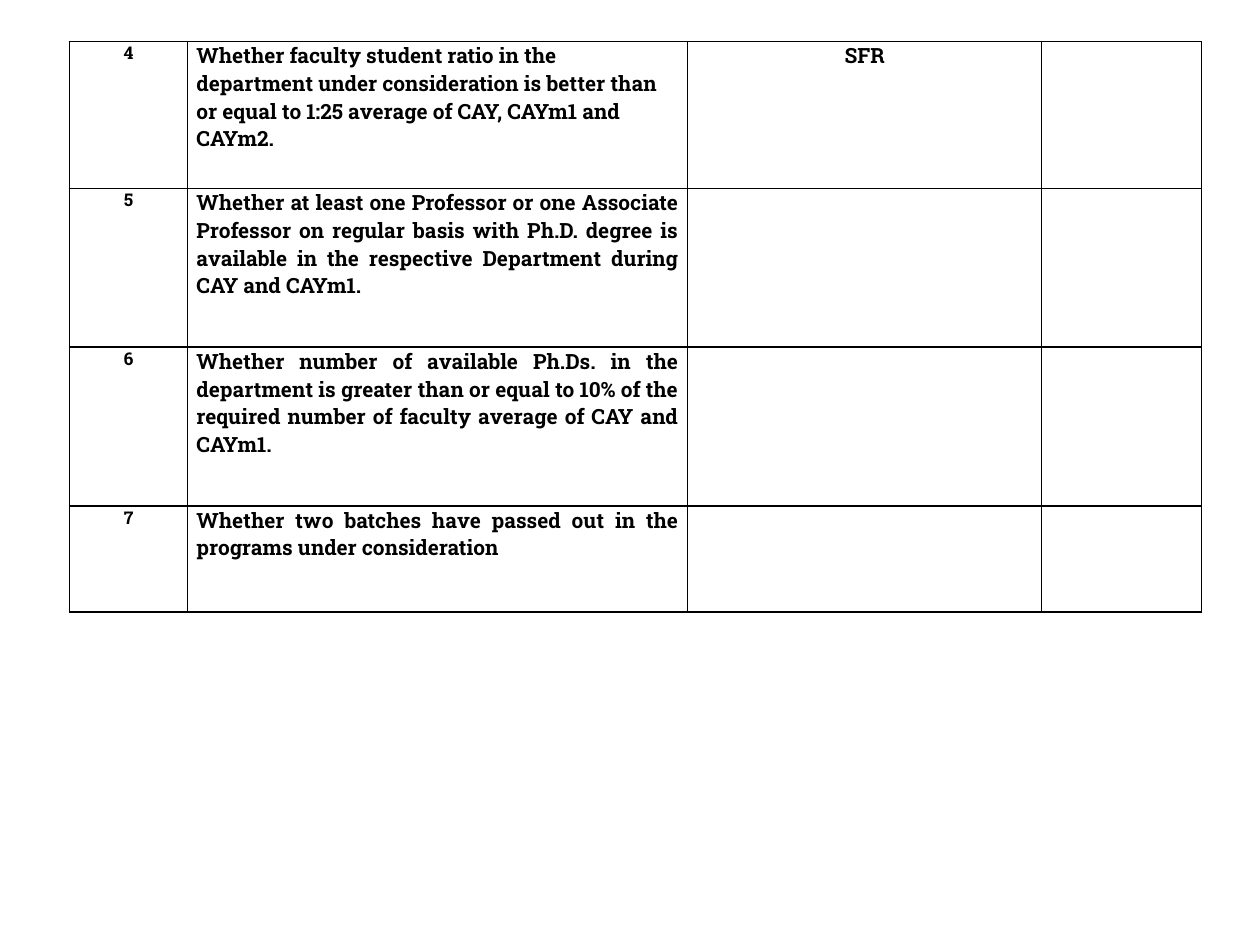
from lxml import etree
from pptx import Presentation
from pptx.dml.color import RGBColor
from pptx.enum.text import MSO_ANCHOR, PP_ALIGN
from pptx.oxml.ns import qn
from pptx.util import Cm, Pt

LEFT, CENTER, JUSTIFY = PP_ALIGN.LEFT, PP_ALIGN.CENTER, PP_ALIGN.JUSTIFY
TOP = MSO_ANCHOR.TOP

COLS = [2.38, 10.08, 7.14, 3.22]
ROWS = [2.96, 3.2, 3.2, 2.14]
CRITERIA = [
    ("4", "Whether faculty student ratio in the department under consideration "
          "is better than or equal to 1:25 average of CAY, CAYm1 and CAYm2.", "SFR", ""),
    ("5", "Whether at least one Professor or one Associate Professor on regular "
          "basis with Ph.D. degree is available in the respective Department "
          "during CAY and CAYm1.", "", ""),
    ("6", "Whether number of available Ph.Ds. in the department is greater than "
          "or equal to 10% of the required number of faculty average of CAY and "
          "CAYm1.", "", ""),
    ("7", "Whether two batches have passed out in the programs under "
          "consideration", "", ""),
]


def rgb(value):
    return RGBColor.from_string(value)


class Deck:
    font = "Roboto Slab"
    ink = "000000"
    border = 1

    def __init__(self, width, height):
        self.prs = Presentation()
        self.prs.slide_width, self.prs.slide_height = Cm(width), Cm(height)
        self.s = self.prs.slides.add_slide(self.prs.slide_layouts[6])

    def borders(self, cell):
        tcPr = cell._tc.get_or_add_tcPr()
        for i, side in enumerate(("lnL", "lnR", "lnT", "lnB")):
            ln = etree.Element(qn(f"a:{side}"), w=str(Pt(self.border)))
            fill = etree.SubElement(ln, qn("a:solidFill"))
            etree.SubElement(fill, qn("a:srgbClr"), val=self.ink)
            tcPr.insert(i, ln)

    def cell(self, cell, text, size, align):
        cell.fill.background()
        cell.margin_left = cell.margin_right = Cm(0.18)
        cell.margin_top = cell.margin_bottom = Cm(0)
        cell.vertical_anchor = TOP
        self.borders(cell)
        p = cell.text_frame.paragraphs[0]
        p.text = text
        p.alignment = align
        for r in p.runs:
            r.font.name, r.font.size, r.font.bold = self.font, Pt(size), True
            r.font.color.rgb = rgb(self.ink)

    def table(self, left, top, cols, rows, data):
        frame = self.s.shapes.add_table(len(rows), len(cols), Cm(left), Cm(top),
                                        Cm(sum(cols)), Cm(sum(rows)))
        table = frame.table
        table.first_row = table.horz_banding = False
        for column, width in zip(table.columns, cols):
            column.width = Cm(width)
        for i, (row, height, values) in enumerate(zip(table.rows, rows, data)):
            row.height = Cm(height)
            aligns = (CENTER, JUSTIFY if i else LEFT, CENTER, CENTER)
            for cell, text, size, align in zip(row.cells, values, (10, 12, 12, 12), aligns):
                self.cell(cell, text, size, align)


def main():
    deck = Deck(25.4, 19.05)
    deck.table(1.4, 0.84, COLS, ROWS, CRITERIA)
    deck.prs.save("out.pptx")


if __name__ == "__main__":
    main()
